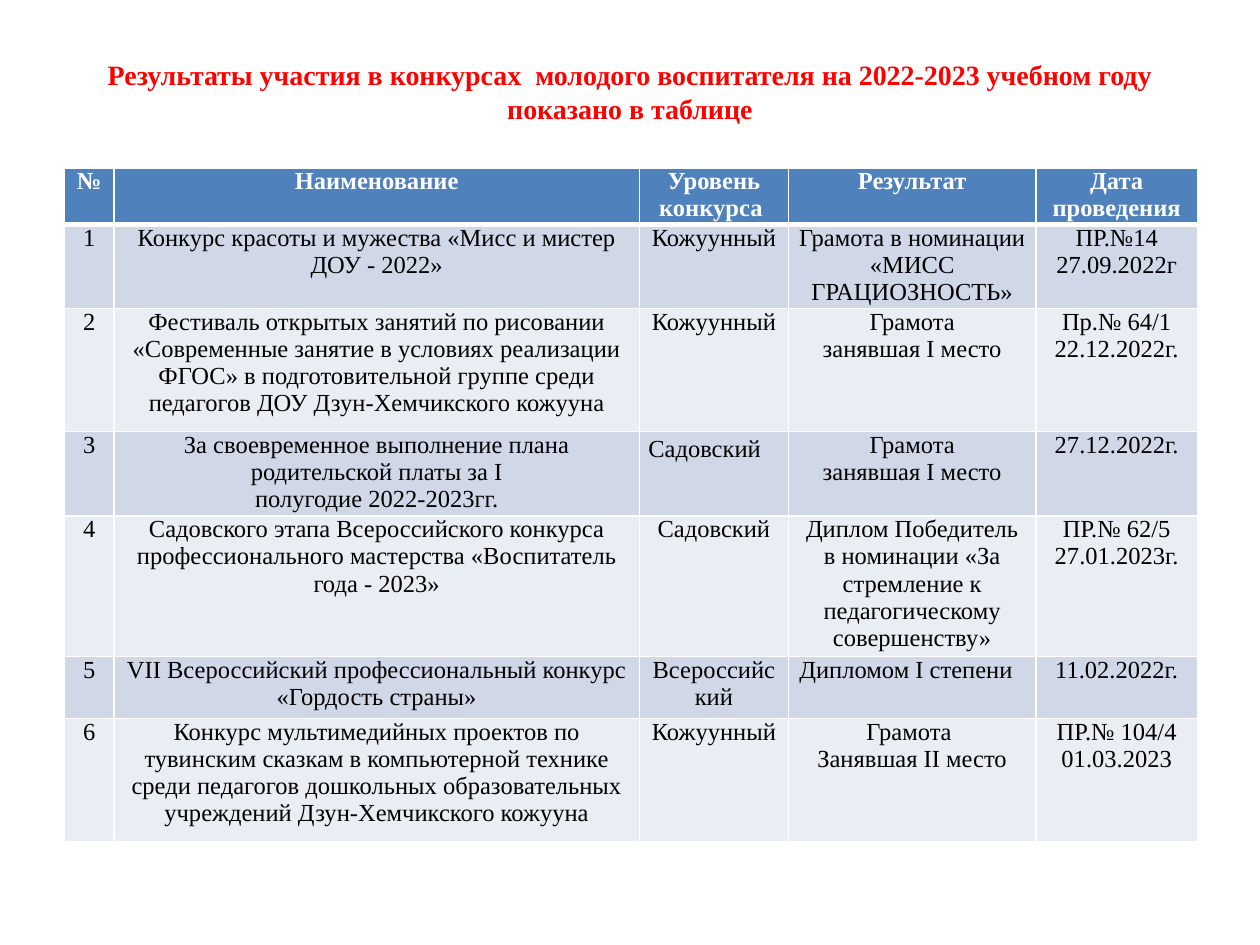
from lxml.etree import SubElement
from pptx import Presentation
from pptx.dml.color import RGBColor
from pptx.enum.text import MSO_ANCHOR as Anchor, PP_ALIGN as Align
from pptx.oxml.ns import qn
from pptx.util import Pt

FONT = "Times New Roman"
COLORS = {
    "title": "FF0000",
    "header": "4F81BD",
    "header_text": "FFFFFF",
    "odd": "D0D8E8",
    "even": "E9EDF4",
    "text": "000000",
    "border": "FFFFFF",
}
TITLE = ("Результаты участия в конкурсах  молодого воспитателя "
         "на 2022-2023 учебном году показано в таблице")
COLUMN_WIDTHS = [28.2, 300.4, 85, 141.6, 92.2]
ROW_HEIGHTS = [32.2, 48, 70.3, 48.4, 80.3, 35.3, 70.3]
ROWS = [
    ["№", "Наименование", "Уровень конкурса ", "Результат", "Дата проведения"],
    ["1", "Конкурс красоты и мужества «Мисс и мистер ДОУ - 2022»",
     "Кожуунный", "Грамота в номинации «МИСС ГРАЦИОЗНОСТЬ»",
     "ПР.№14\n27.09.2022г"],
    ["2", "Фестиваль открытых занятий по рисовании «Современные занятие "
     "в условиях реализации ФГОС» в подготовительной группе среди "
     "педагогов ДОУ Дзун-Хемчикского кожууна",
     "Кожуунный", "Грамота\nзанявшая I место", "Пр.№ 64/1\n22.12.2022г."],
    ["3", "За своевременное выполнение плана родительской платы за I\n"
     "полугодие 2022-2023гг.",
     "Садовский", "Грамота\nзанявшая I место", "27.12.2022г."],
    ["4", "Садовского этапа Всероссийского конкурса профессионального "
     "мастерства «Воспитатель года - 2023»",
     "Садовский", "Диплом Победитель\nв номинации «За стремление к "
     "педагогическому совершенству»", "ПР.№ 62/5\n27.01.2023г."],
    ["5", "VII Всероссийский профессиональный конкурс «Гордость страны»",
     "Всероссийский", "Дипломом I степени  ", "11.02.2022г."],
    ["6", "Конкурс мультимедийных проектов по тувинским сказкам в "
     "компьютерной технике среди педагогов дошкольных образовательных "
     "учреждений Дзун-Хемчикского кожууна",
     "Кожуунный", "Грамота \nЗанявшая II место", "ПР.№ 104/4\n01.03.2023"],
]


def add_span(para, text, size, color, bold):
    span = para.add_run()
    span.text = text
    span.font.name = FONT
    span.font.size = Pt(size)
    span.font.bold = bold
    span.font.color.rgb = RGBColor.from_string(COLORS[color])


def fill_title(page):
    box = page.shapes.title
    box.left, box.top, box.width, box.height = Pt(36), Pt(21.6), Pt(648), Pt(61.2)
    box.text_frame.vertical_anchor = Anchor.MIDDLE
    para = box.text_frame.paragraphs[0]
    para.alignment = Align.CENTER
    add_span(para, TITLE, 16, "title", True)


def set_borders(cell, top, bottom):
    properties = cell._tc.get_or_add_tcPr()
    for side, width in (("L", 1), ("R", 1), ("T", top), ("B", bottom)):
        line = SubElement(properties, qn(f"a:ln{side}"), w=str(Pt(width)))
        fill = SubElement(line, qn("a:solidFill"))
        SubElement(fill, qn("a:srgbClr"), val=COLORS["border"])


def fill_cell(cell, text, row):
    is_header = row == 0
    background = "header" if is_header else ("odd" if row % 2 else "even")
    set_borders(cell, 3 if row == 1 else 1, 3 if is_header else 1)
    cell.fill.solid()
    cell.fill.fore_color.rgb = RGBColor.from_string(COLORS[background])
    cell.margin_left = cell.margin_right = Pt(5)
    cell.margin_top = cell.margin_bottom = Pt(0)
    cell.vertical_anchor = Anchor.TOP
    for index, line in enumerate(text.split("\n")):
        frame = cell.text_frame
        para = frame.add_paragraph() if index else frame.paragraphs[0]
        para.alignment = Align.CENTER
        add_span(para, line, 14, "header_text" if is_header else "text", is_header)


def add_results(page):
    table = page.shapes.add_table(
        len(ROWS), len(COLUMN_WIDTHS), Pt(36.9), Pt(96),
        Pt(sum(COLUMN_WIDTHS)), Pt(sum(ROW_HEIGHTS))).table
    for column, width in zip(table.columns, COLUMN_WIDTHS):
        column.width = Pt(width)
    for row, (texts, height) in enumerate(zip(ROWS, ROW_HEIGHTS)):
        table.rows[row].height = Pt(height)
        for column, text in enumerate(texts):
            fill_cell(table.cell(row, column), text, row)
    para = table.cell(3, 2).text_frame.paragraphs[0]
    para.alignment = Align.LEFT
    para.line_spacing = 1.15
    para.space_after = Pt(10)


def main():
    deck = Presentation()
    deck.slide_width, deck.slide_height = Pt(720), Pt(540)
    page = deck.slides.add_slide(deck.slide_layouts[5])
    fill_title(page)
    add_results(page)
    deck.save("out.pptx")


if __name__ == "__main__":
    main()
